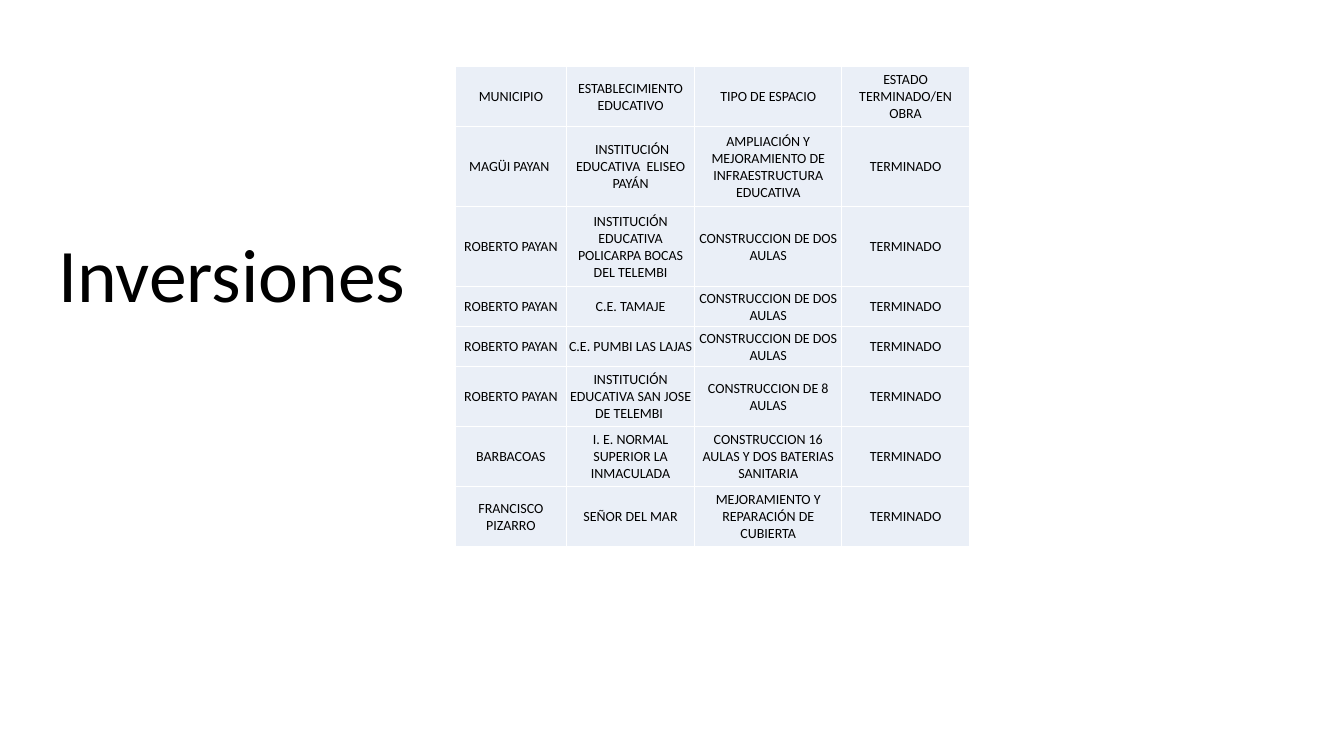
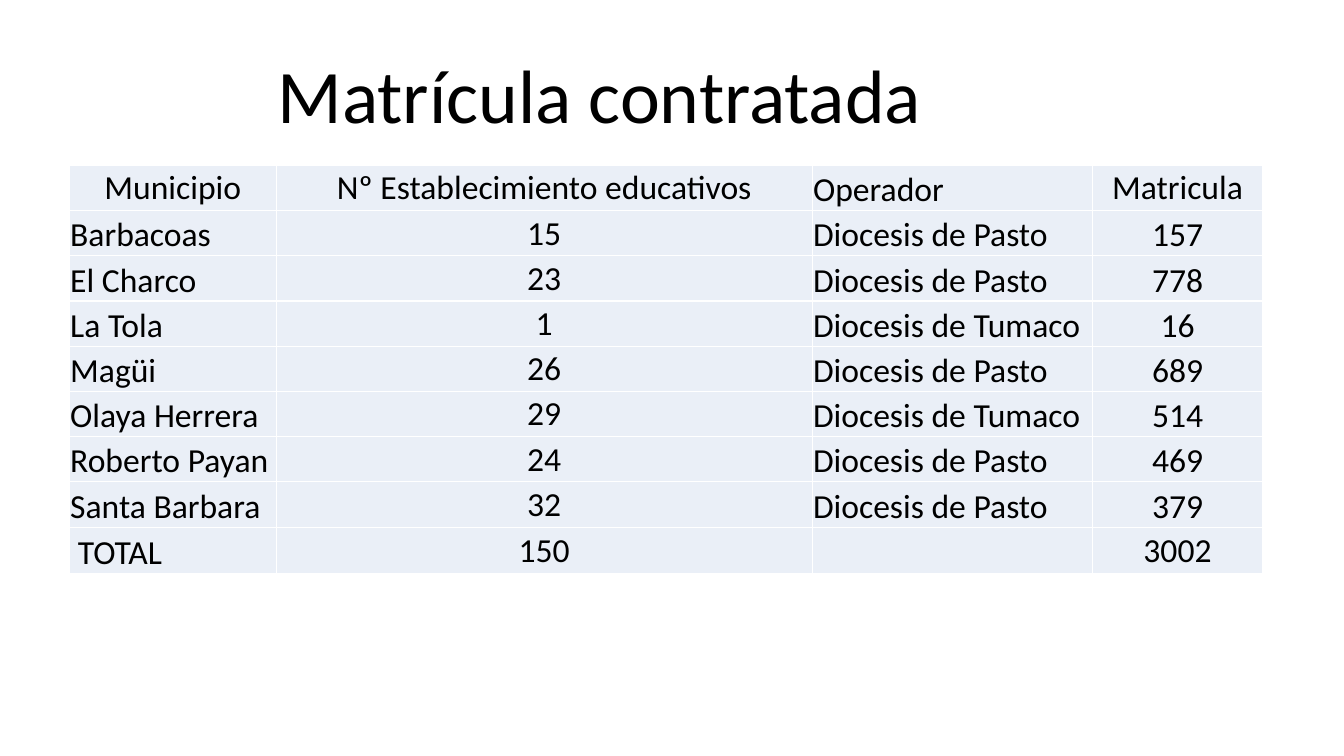
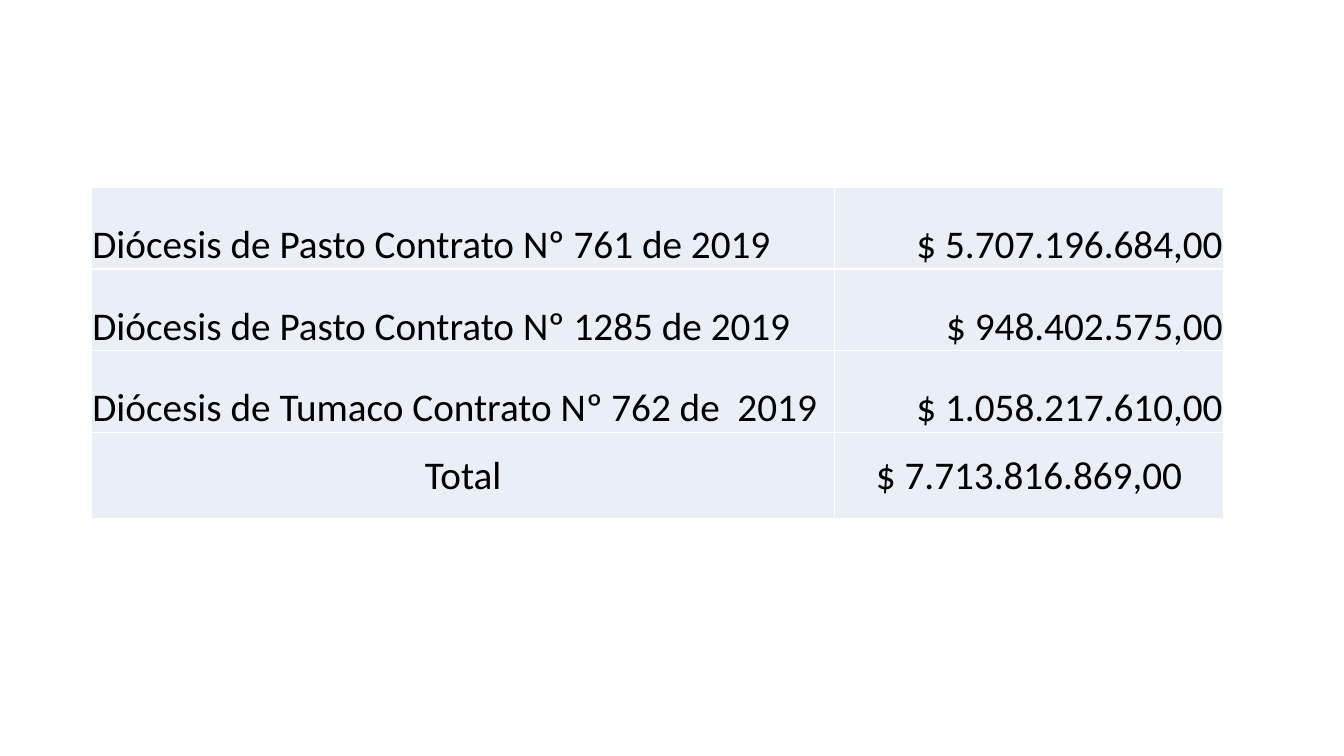
from lxml.etree import SubElement
from pptx import Presentation
from pptx.dml.color import RGBColor
from pptx.enum.text import MSO_ANCHOR, MSO_AUTO_SIZE, PP_ALIGN
from pptx.oxml.ns import qn
from pptx.util import Cm, Pt

COLORS = {"text": "000000", "cell": "EAEFF7", "border": "FFFFFF"}
FONT = "Calibri"
TITLE_ONLY, BLANK = 5, 6
CELL_STYLES = {
    "c": (MSO_ANCHOR.MIDDLE, PP_ALIGN.CENTER),
    "d": (MSO_ANCHOR.BOTTOM, PP_ALIGN.CENTER),
    "l": (MSO_ANCHOR.BOTTOM, PP_ALIGN.LEFT),
    "r": (MSO_ANCHOR.BOTTOM, PP_ALIGN.RIGHT),
}

INVESTMENTS = [
    ["MUNICIPIO", "ESTABLECIMIENTO EDUCATIVO", "TIPO DE ESPACIO", "ESTADO TERMINADO/EN OBRA"],
    ["MAGÜI PAYAN ", " INSTITUCIÓN EDUCATIVA  ELISEO PAYÁN",
     "AMPLIACIÓN Y MEJORAMIENTO DE INFRAESTRUCTURA EDUCATIVA", "TERMINADO"],
    ["ROBERTO PAYAN", "INSTITUCIÓN EDUCATIVA POLICARPA BOCAS DEL TELEMBI",
     "CONSTRUCCION DE DOS AULAS", "TERMINADO"],
    ["ROBERTO PAYAN", "C.E. TAMAJE", "CONSTRUCCION DE DOS AULAS", "TERMINADO"],
    ["ROBERTO PAYAN", "C.E. PUMBI LAS LAJAS", "CONSTRUCCION DE DOS AULAS", "TERMINADO"],
    ["ROBERTO PAYAN", "INSTITUCIÓN EDUCATIVA SAN JOSE DE TELEMBI ",
     "CONSTRUCCION DE 8 AULAS", "TERMINADO"],
    ["BARBACOAS", "I. E. NORMAL SUPERIOR LA INMACULADA",
     "CONSTRUCCION 16 AULAS Y DOS BATERIAS SANITARIA", "TERMINADO"],
    ["FRANCISCO PIZARRO", "SEÑOR DEL MAR", "MEJORAMIENTO Y REPARACIÓN DE CUBIERTA", "TERMINADO"],
]
ENROLMENT = [
    ["Municipio", "Nº Establecimiento educativos", "Operador", "Matricula"],
    ["Barbacoas", "15", "Diocesis de Pasto", "157"],
    ["El Charco", "23", "Diocesis de Pasto", "778"],
    ["La Tola", "1", "Diocesis de Tumaco", "16"],
    ["Magüi", "26", "Diocesis de Pasto", "689"],
    ["Olaya Herrera", "29", "Diocesis de Tumaco", "514"],
    ["Roberto Payan", "24", "Diocesis de Pasto", "469"],
    ["Santa Barbara", "32", "Diocesis de Pasto", "379"],
    [" TOTAL", "150", "", "3002"],
]
CONTRACTS = [
    ["Diócesis de Pasto Contrato Nº 761 de 2019", "$ 5.707.196.684,00"],
    ["Diócesis de Pasto Contrato Nº 1285 de 2019", "$ 948.402.575,00"],
    ["Diócesis de Tumaco Contrato Nº 762 de  2019", "$ 1.058.217.610,00"],
    ["Total", "$ 7.713.816.869,00"],
]


def color(name):
    return RGBColor.from_string(COLORS[name])


def format_paragraph(paragraph, size, align):
    paragraph.alignment = align
    paragraph.font.name = FONT
    paragraph.font.size = Pt(size)
    paragraph.font.color.rgb = color("text")


def add_titled_slide(deck, title, left, top, width):
    page = deck.slides.add_slide(deck.slide_layouts[TITLE_ONLY])
    box = page.shapes.title
    box.left, box.top, box.width, box.height = Cm(left), Cm(top), Cm(width), Cm(2.57)
    frame = box.text_frame
    frame.text = title
    frame.word_wrap = False
    frame.auto_size = MSO_AUTO_SIZE.SHAPE_TO_FIT_TEXT
    frame.vertical_anchor = MSO_ANCHOR.TOP
    format_paragraph(frame.paragraphs[0], 54, PP_ALIGN.CENTER)
    return page


def add_borders(cell):
    properties = cell._tc.get_or_add_tcPr()
    for side in ("a:lnL", "a:lnR", "a:lnT", "a:lnB"):
        line = SubElement(properties, qn(side), w=str(Pt(1)))
        fill = SubElement(line, qn("a:solidFill"))
        SubElement(fill, qn("a:srgbClr"), val=COLORS["border"])


def fill_cell(cell, text, size, style):
    anchor, align = CELL_STYLES[style]
    add_borders(cell)
    cell.fill.solid()
    cell.fill.fore_color.rgb = color("cell")
    cell.margin_left = cell.margin_right = cell.margin_top = Cm(0.02)
    cell.margin_bottom = 0
    cell.vertical_anchor = anchor
    cell.text = text
    format_paragraph(cell.text_frame.paragraphs[0], size, align)


def add_grid(page, left, top, widths, heights, rows, size, styles):
    table = page.shapes.add_table(
        len(rows), len(widths), Cm(left), Cm(top), Cm(sum(widths)), Cm(sum(heights))
    ).table
    table.first_row = table.horz_banding = False
    for column, width in zip(table.columns, widths):
        column.width = Cm(width)
    for row, height, texts, row_styles in zip(table.rows, heights, rows, styles):
        row.height = Cm(height)
        for cell, text, style in zip(row.cells, texts, row_styles):
            fill_cell(cell, text, size, style)


def main():
    deck = Presentation()
    deck.slide_width, deck.slide_height = Cm(33.87), Cm(19.05)

    page = add_titled_slide(deck, "Inversiones", 1.17, 5.59, 9.35)
    line_counts = [3, 4, 4, 2, 2, 3, 3, 3]
    add_grid(page, 11.48, 1.68, [2.79, 3.24, 3.7, 3.22],
             [count * 0.504 for count in line_counts],
             INVESTMENTS, 10, ["cccc"] * len(INVESTMENTS))

    page = add_titled_slide(deck, "Matrícula contratada", 6.65, 1.09, 16.92)
    add_grid(page, 1.75, 4.17, [5.21, 13.51, 7.06, 4.29], [1.14] * 8 + [1.18],
             ENROLMENT, 24, ["cclc"] + ["lcld"] * 7 + ["lclc"])

    page = deck.slides.add_slide(deck.slide_layouts[BLANK])
    add_grid(page, 2.31, 4.72, [18.72, 9.8], [2.06] * 3 + [2.16],
             CONTRACTS, 28, ["lr"] * 3 + ["cc"])

    deck.save("out.pptx")


if __name__ == "__main__":
    main()
